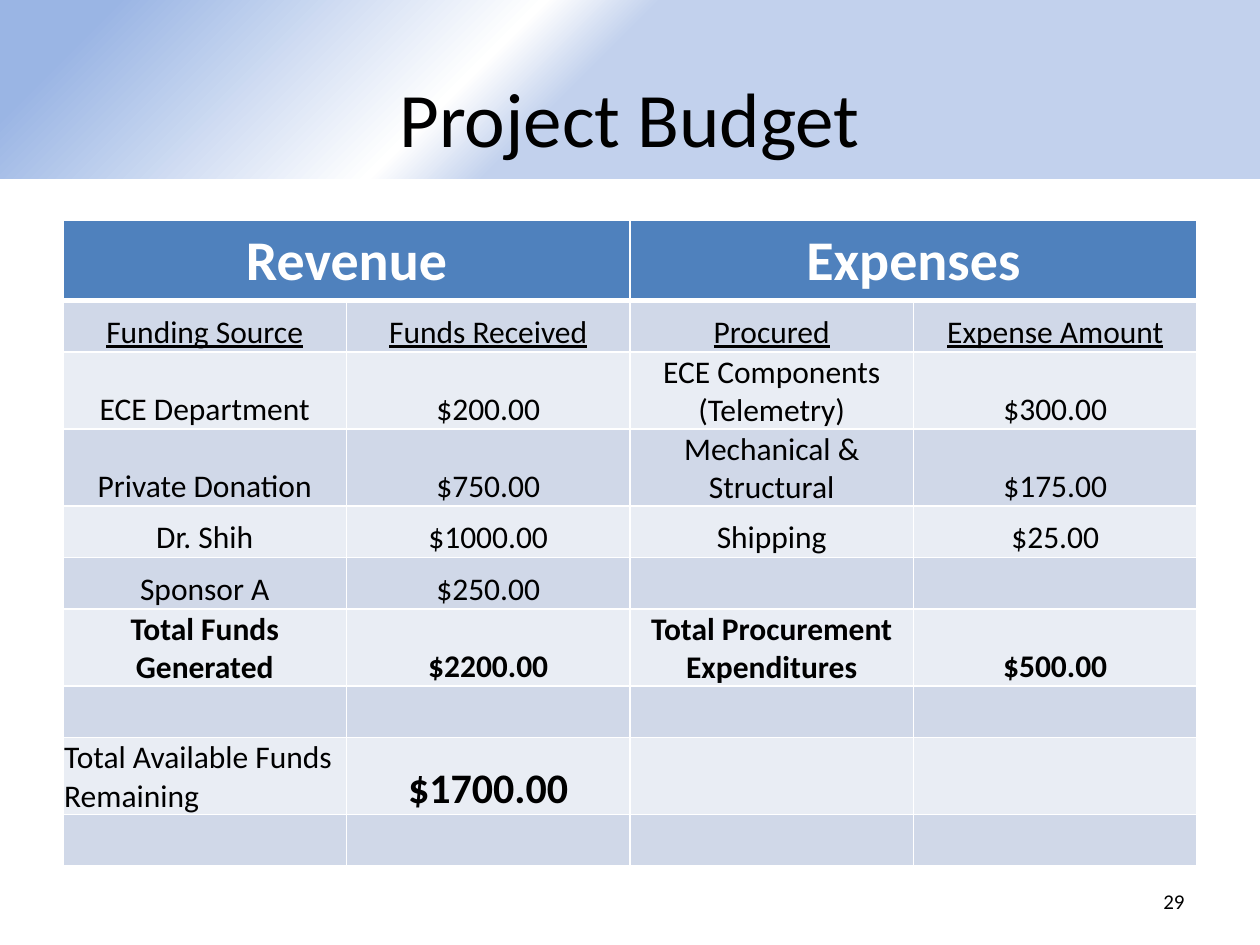
from copy import deepcopy

from lxml.etree import SubElement
from pptx import Presentation
from pptx.dml.color import RGBColor
from pptx.enum.shapes import MSO_SHAPE
from pptx.enum.text import MSO_ANCHOR, PP_ALIGN
from pptx.oxml.ns import qn
from pptx.util import Inches, Pt

FONT = "Calibri"
BLACK, WHITE = "000000", "FFFFFF"
HEADER, BAND_DARK, BAND_LIGHT = "4F81BD", "D0D8E8", "E9EDF4"
BANNER_STOPS = [(0.08, "9AB5E4"), (0.38, WHITE), (0.46, "C2D1ED")]

GROUPS = ["Revenue", "Expenses"]
ROWS = [
    ["Funding Source", "Funds Received", "Procured", "Expense Amount"],
    ["ECE Department", "$200.00", "ECE Components (Telemetry)", "$300.00"],
    ["Private Donation", "$750.00", "Mechanical & Structural", "$175.00"],
    ["Dr. Shih", "$1000.00", "Shipping", "$25.00"],
    ["Sponsor A", "$250.00", "", ""],
    ["Total Funds Generated", "$2200.00",
     "Total Procurement Expenditures", "$500.00"],
    [""] * 4,
    ["Total Available Funds Remaining", "$1700.00", "", ""],
    [""] * 4,
]
ROW_FORMATS = {0: {"underline": True}, 5: {"bold": True}}
CELL_FORMATS = {
    (7, 0): {"align": PP_ALIGN.LEFT},
    (7, 1): {"size": 24, "bold": True},
}


def rgb(value):
    return RGBColor.from_string(value)


def write(tf, text, size=18, color=BLACK, bold=False, underline=False,
          align=PP_ALIGN.CENTER):
    p = tf.paragraphs[0]
    p.alignment = align
    r = p.add_run()
    r.text = text
    r.font.name, r.font.size = FONT, Pt(size)
    r.font.bold, r.font.underline = bold, underline
    r.font.color.rgb = rgb(color)


def add_text(s, text, left, top, width, height, **fmt):
    box = s.shapes.add_textbox(Inches(left), Inches(top),
                               Inches(width), Inches(height))
    tf = box.text_frame
    tf.word_wrap = True
    tf.vertical_anchor = MSO_ANCHOR.MIDDLE
    write(tf, text, **fmt)


def add_banner(s):
    sp = s.shapes.add_shape(MSO_SHAPE.RECTANGLE, 0, 0, Inches(10), Inches(1.42))
    sp.shadow.inherit = False
    sp.line.fill.background()
    sp.fill.gradient()
    sp.fill.gradient_angle = 315
    # A new gradient has two stops; add the third
    stops = sp._element.spPr.find(qn("a:gradFill")).find(qn("a:gsLst"))
    stops.append(deepcopy(stops[0]))
    for stop, (position, color) in zip(sp.fill.gradient_stops, BANNER_STOPS):
        stop.position = position
        stop.color.rgb = rgb(color)


def set_borders(cell, top=1, bottom=1):
    tcPr = cell._tc.get_or_add_tcPr()
    widths = {"a:lnL": 1, "a:lnR": 1, "a:lnT": top, "a:lnB": bottom}
    for i, (tag, width) in enumerate(widths.items()):
        ln = SubElement(tcPr, qn(tag), w=str(Pt(width)))
        fill = SubElement(ln, qn("a:solidFill"))
        SubElement(fill, qn("a:srgbClr"), val=WHITE)
        tcPr.insert(i, ln)


def style_cell(cell, color, **borders):
    cell.fill.solid()
    cell.fill.fore_color.rgb = rgb(color)
    set_borders(cell, **borders)


def fill_cell(cell, text, **fmt):
    cell.vertical_anchor = MSO_ANCHOR.BOTTOM
    cell.margin_left = cell.margin_right = cell.margin_top = Inches(0.01)
    cell.margin_bottom = 0
    write(cell.text_frame, text, **fmt)


def add_budget_table(s):
    frame = s.shapes.add_table(len(ROWS) + 1, 4, Inches(0.5), Inches(1.75),
                               Inches(9), Inches(5.1))
    table = frame.table
    for row in table.rows:
        row.height = Inches(0.41)
    frame.height = Inches(5.1)

    # Header row, each group over two columns
    for c in range(4):
        style_cell(table.cell(0, c), HEADER, bottom=3)
    for i, group in enumerate(GROUPS):
        cell = table.cell(0, 2 * i)
        cell.merge(table.cell(0, 2 * i + 1))
        write(cell.text_frame, group, size=32, color=WHITE, bold=True)

    # Banded body rows
    for i, values in enumerate(ROWS):
        for c, text in enumerate(values):
            cell = table.cell(i + 1, c)
            style_cell(cell, BAND_LIGHT if i % 2 else BAND_DARK,
                       top=1 if i else 3)
            if text:
                fmt = CELL_FORMATS.get((i, c), ROW_FORMATS.get(i, {}))
                fill_cell(cell, text, **fmt)


def main():
    prs = Presentation()
    prs.slide_width, prs.slide_height = Inches(10), Inches(7.5)
    s = prs.slides.add_slide(prs.slide_layouts[6])

    add_banner(s)
    add_text(s, "Project Budget", 0.5, 0.3, 9, 1.25, size=44)
    add_budget_table(s)

    # Slide number
    add_text(s, "29", 7.17, 6.95, 2.33, 0.4, size=12, align=PP_ALIGN.RIGHT)

    prs.save("out.pptx")


if __name__ == "__main__":
    main()
